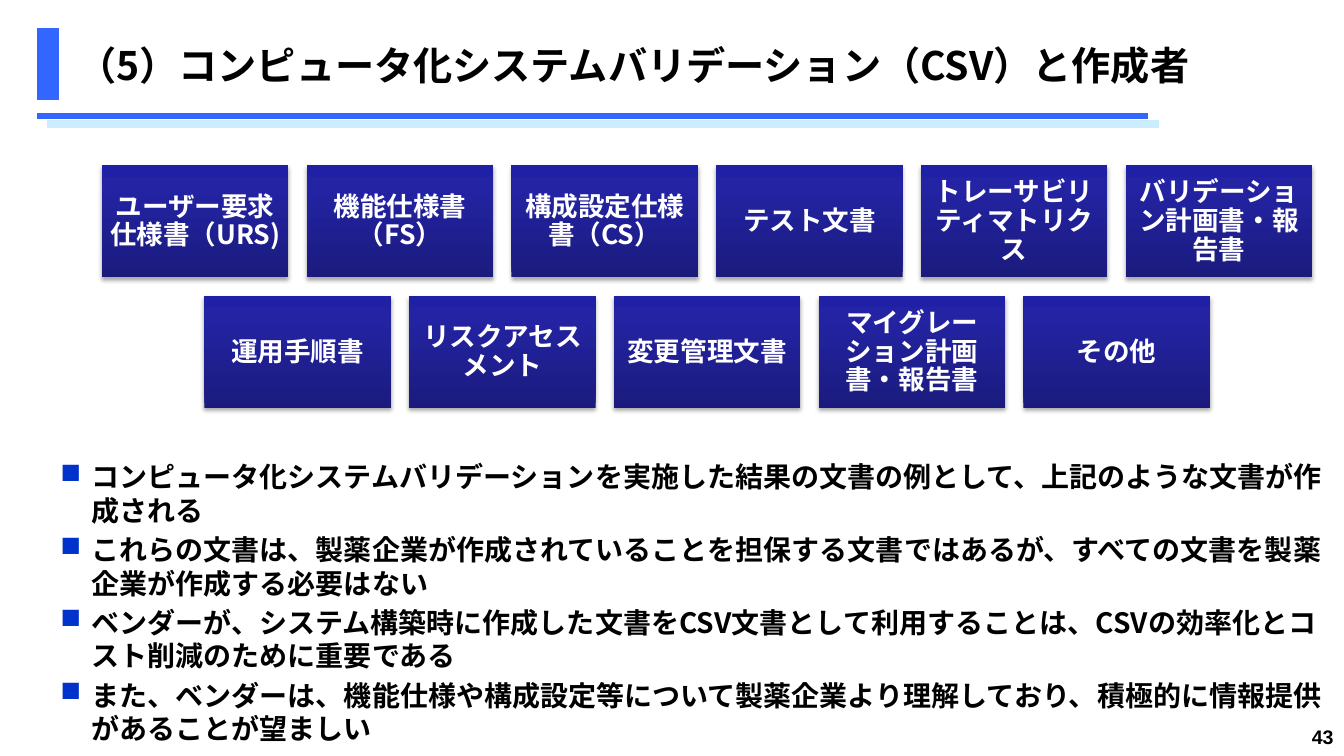
"""Build the slide on computerized system validation documents and their authors."""
from dataclasses import dataclass

from lxml.etree import SubElement
from pptx import Presentation
from pptx.dml.color import RGBColor
from pptx.enum.lang import MSO_LANGUAGE_ID
from pptx.enum.shapes import MSO_CONNECTOR, MSO_SHAPE
from pptx.enum.text import MSO_ANCHOR, PP_ALIGN
from pptx.oxml import parse_xml
from pptx.oxml.ns import nsdecls, qn
from pptx.slide import Slide
from pptx.text.text import TextFrame, _Paragraph
from pptx.util import Cm, Pt

COLORS = {
    "accent": "3366FF",
    "pale": "CCECFF",
    "bullet": "0033CC",
    "text": "000000",
    "card_text": "FFFFFF",
    "card_bottom": "1B1B7E",
    "card_middle": "2323A3",
    "card_top": "2020A6",
}
JAPANESE_FONT = "Noto Sans CJK JP"
CARD_WIDTH, CARD_HEIGHT = 4.7, 2.82
CARD_PITCH, ROW_PITCH = 5.16, 3.29


@dataclass
class Rule:
    """A horizontal line under the title."""

    right: float
    left: float
    y: float
    color: str
    width: float


@dataclass
class CardRow:
    """A row of document cards."""

    left: float
    labels: list[str]


RULES = [
    Rule(28.93, 0.94, 2.92, "accent", 4.5),
    Rule(29.21, 1.19, 3.12, "pale", 6),
]
CARD_ROWS = [
    CardRow(2.57, [
        "ユーザー要求仕様書（URS)",
        "機能仕様書（FS）",
        "構成設定仕様書（CS）",
        "テスト文書",
        "トレーサビリティマトリクス",
        "バリデーション計画書・報告書",
    ]),
    CardRow(2.57 + CARD_PITCH / 2, [
        "運用手順書",
        "リスクアセスメント",
        "変更管理文書",
        "マイグレーション計画書・報告書",
        "その他",
    ]),
]
POINTS = [
    "コンピュータ化システムバリデーションを実施した結果の文書の例として、上記のような文書が作成される",
    "これらの文書は、製薬企業が作成されていることを担保する文書ではあるが、すべての文書を製薬企業が作成する必要はない",
    "ベンダーが、システム構築時に作成した文書をCSV文書として利用することは、CSVの効率化とコスト削減のために重要である",
    "また、ベンダーは、機能仕様や構成設定等について製薬企業より理解しており、積極的に情報提供があることが望ましい",
]


def rgb(name: str) -> RGBColor:
    """Return a named colour."""
    return RGBColor.from_string(COLORS[name])


def add_span(para: _Paragraph, text: str, size: float, color: str = "text",
             font_name: str = JAPANESE_FONT) -> None:
    """Add one bold run to a paragraph."""
    span = para.add_run()
    span.text = text
    font = span.font
    font.size, font.bold, font.name = Pt(size), True, font_name
    font.color.rgb = rgb(color)
    font.language_id = MSO_LANGUAGE_ID.JAPANESE
    latin = font._element.find(qn("a:latin"))
    latin.addnext(parse_xml(f'<a:ea {nsdecls("a")} typeface="{font_name}"/>'))


def add_text_box(page: Slide, left: float, top: float, width: float, height: float) -> TextFrame:
    """Add a wrapping text box and return its frame."""
    frame = page.shapes.add_textbox(Cm(left), Cm(top), Cm(width), Cm(height)).text_frame
    frame.word_wrap = True
    return frame


def add_rule(page: Slide, rule: Rule) -> None:
    """Draw a line under the title."""
    line = page.shapes.add_connector(
        MSO_CONNECTOR.STRAIGHT, Cm(rule.right), Cm(rule.y), Cm(rule.left), Cm(rule.y))
    line.line.color.rgb = rgb(rule.color)
    line.line.width = Pt(rule.width)
    SubElement(line._element.spPr, qn("a:effectLst"))


def add_heading(page: Slide) -> None:
    """Draw the title with its marker and lines."""
    marker = page.shapes.add_shape(MSO_SHAPE.RECTANGLE, Cm(0.94), Cm(0.71), Cm(0.53), Cm(1.8))
    marker.shadow.inherit = False
    marker.fill.solid()
    marker.fill.fore_color.rgb = rgb("accent")
    marker.line.color.rgb = rgb("accent")
    marker.line.width = Pt(0.75)
    for rule in RULES:
        add_rule(page, rule)
    frame = add_text_box(page, 1.7, 0.53, 30.48, 2.21)
    frame.vertical_anchor = MSO_ANCHOR.MIDDLE
    add_span(frame.paragraphs[0], "（5）コンピュータ化システムバリデーション（CSV）と作成者", 28)


def add_card(page: Slide, left: float, top: float, label: str) -> None:
    """Draw a shaded card with a centred label."""
    card = page.shapes.add_shape(
        MSO_SHAPE.RECTANGLE, Cm(left), Cm(top), Cm(CARD_WIDTH), Cm(CARD_HEIGHT))
    card.line.fill.background()
    stops = "".join(
        f'<a:gs pos="{position}"><a:srgbClr val="{COLORS[name]}"/></a:gs>'
        for position, name in ((0, "card_bottom"), (80000, "card_middle"), (100000, "card_top")))
    properties = card._element.spPr
    properties.find(qn("a:prstGeom")).addnext(parse_xml(
        f'<a:gradFill {nsdecls("a")} rotWithShape="1"><a:gsLst>{stops}</a:gsLst>'
        '<a:lin ang="16200000" scaled="0"/></a:gradFill>'))
    card.shadow.inherit = False
    properties.find(qn("a:effectLst")).append(parse_xml(
        f'<a:outerShdw {nsdecls("a")} blurRad="{Pt(3.1)}" dist="{Pt(1.8)}" dir="5400000" '
        f'rotWithShape="0"><a:srgbClr val="{COLORS["text"]}"><a:alpha val="35000"/>'
        '</a:srgbClr></a:outerShdw>'))
    frame = card.text_frame
    frame.word_wrap = True
    frame.vertical_anchor = MSO_ANCHOR.MIDDLE
    frame.margin_left = frame.margin_right = frame.margin_top = frame.margin_bottom = Cm(0.2)
    para = frame.paragraphs[0]
    para.alignment = PP_ALIGN.CENTER
    para.line_spacing = Pt(20.6)
    add_span(para, label, 19, "card_text")


def add_points(page: Slide) -> None:
    """Write the bulleted explanation."""
    frame = add_text_box(page, 0, 11.46, 33.65, 7.57)
    for index, point in enumerate(POINTS):
        para = frame.add_paragraph() if index else frame.paragraphs[0]
        para.level = 1
        para.line_spacing = Pt(24)
        if index:
            para.space_before = Pt(4)
        properties = para._p.get_or_add_pPr()
        properties.set("marL", str(Cm(2.06)))
        properties.set("indent", str(Cm(-0.79)))
        color = SubElement(properties, qn("a:buClr"))
        SubElement(color, qn("a:srgbClr"), val=COLORS["bullet"])
        SubElement(properties, qn("a:buChar"), char="■")
        add_span(para, point, 20)


def add_page_number(page: Slide) -> None:
    """Write the page number."""
    para = add_text_box(page, 31.5, 18.14, 2.36, 0.94).paragraphs[0]
    para.alignment = PP_ALIGN.RIGHT
    add_span(para, "43", 14, font_name="Arial")


def main() -> None:
    """Build and save the deck."""
    deck = Presentation()
    deck.slide_width, deck.slide_height = Cm(33.87), Cm(19.05)
    page = deck.slides.add_slide(deck.slide_layouts[6])
    add_heading(page)
    add_page_number(page)
    for row_index, row in enumerate(CARD_ROWS):
        for column, label in enumerate(row.labels):
            add_card(page, row.left + column * CARD_PITCH, 4.17 + row_index * ROW_PITCH, label)
    add_points(page)
    deck.save("out.pptx")


if __name__ == "__main__":
    main()
